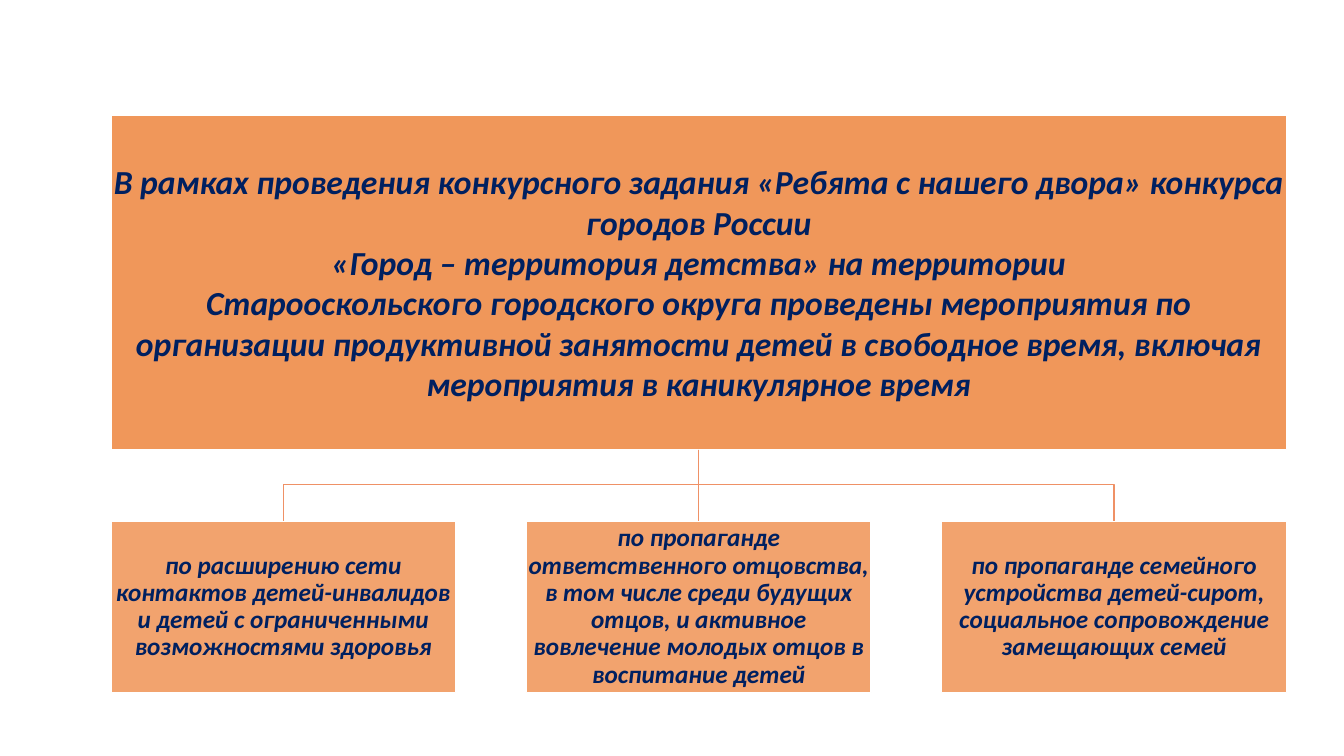
from lxml import etree
from pptx import Presentation
from pptx import util as u
from pptx.dml.color import RGBColor
from pptx.enum import shapes, text
from pptx.oxml.ns import qn

PX = 9144  # EMU per px, 100 px to the inch
ORANGE = RGBColor(0xED, 0x7D, 0x31)
LINE = RGBColor(0xEF, 0x91, 0x66)
NAVY = RGBColor(0x00, 0x20, 0x60)
WHITE = RGBColor(0xFF, 0xFF, 0xFF)

LEFT, BOX_WIDTH, STEP = 110, 342, 412
CENTRE = LEFT + STEP + BOX_WIDTH // 2
GOAL_TOP, GOAL_HEIGHT = 114, 332
GOAL_BOTTOM = GOAL_TOP + GOAL_HEIGHT
TASK_TOP, TASK_HEIGHT = 517, 170
BRANCH_Y = 481

GOAL = [
    "В рамках проведения конкурсного задания «Ребята с нашего двора» конкурса городов России",
    "«Город – территория детства» на территории",
    "Старооскольского городского округа проведены мероприятия по организации "
    "продуктивной занятости детей в свободное время, включая мероприятия в каникулярное время",
]
TASKS = [
    "по расширению сети контактов детей-инвалидов и детей с ограниченными возможностями здоровья",
    "по пропаганде ответственного отцовства, в том числе среди будущих отцов, "
    "и активное вовлечение молодых отцов в воспитание детей",
    "по пропаганде семейного устройства детей-сирот, социальное сопровождение замещающих семей",
]


def fill_box(box, content, size, opacity, inset, spacing):
    box.fill.solid()
    box.fill.fore_color.rgb = ORANGE
    colour = box.fill._xPr.find(qn("a:solidFill"))[0]
    etree.SubElement(colour, qn("a:alpha")).set("val", str(opacity * 1000))
    box.line.color.rgb = WHITE
    box.line.width = u.Pt(1)
    frame = box.text_frame
    frame.text = content
    frame.word_wrap = True
    frame.auto_size = text.MSO_AUTO_SIZE.NONE
    frame.vertical_anchor = text.MSO_ANCHOR.MIDDLE
    frame.margin_left = frame.margin_right = inset * PX
    frame.margin_top = frame.margin_bottom = inset * PX
    for paragraph in frame.paragraphs:
        paragraph.alignment = text.PP_ALIGN.CENTER
        paragraph.line_spacing = spacing
        for run in paragraph.runs:
            font = run.font
            font.name, font.size = "Calibri", u.Pt(size)
            font.bold = font.italic = True
            font.color.rgb = NAVY


prs = Presentation()
prs.slide_width, prs.slide_height = 1333 * PX, 750 * PX
slide = prs.slides.add_slide(prs.slide_layouts[5])

# Goal of the contest
goal = slide.shapes.title
goal.left, goal.top = LEFT * PX, GOAL_TOP * PX
goal.width, goal.height = (2 * STEP + BOX_WIDTH) * PX, GOAL_HEIGHT * PX
fill_box(goal, "\n".join(GOAL), 24, 80, 2, 1.0)

# Tasks, each joined to the goal
for index, task_text in enumerate(TASKS):
    task_left = LEFT + index * STEP
    task = slide.shapes.add_shape(
        shapes.MSO_SHAPE.RECTANGLE,
        task_left * PX, TASK_TOP * PX, BOX_WIDTH * PX, TASK_HEIGHT * PX)
    task.shadow.inherit = False
    fill_box(task, task_text, 18, 70, 1, 0.9)

    task_centre = task_left + BOX_WIDTH // 2
    if task_centre == CENTRE:
        branch = slide.shapes.add_connector(
            shapes.MSO_CONNECTOR.STRAIGHT,
            CENTRE * PX, GOAL_BOTTOM * PX, CENTRE * PX, TASK_TOP * PX)
        branch.begin_connect(goal, 2)
        branch.end_connect(task, 0)
        etree.SubElement(branch._element.spPr, qn("a:effectLst"))
    else:
        outline = slide.shapes.build_freeform(CENTRE, GOAL_BOTTOM, scale=PX)
        outline.add_line_segments(
            [(CENTRE, BRANCH_Y), (task_centre, BRANCH_Y), (task_centre, TASK_TOP)],
            close=False)
        branch = outline.convert_to_shape()
        branch.fill.background()
        branch.shadow.inherit = False
    branch.line.color.rgb = LINE
    branch.line.width = u.Pt(1)

prs.save("out.pptx")
